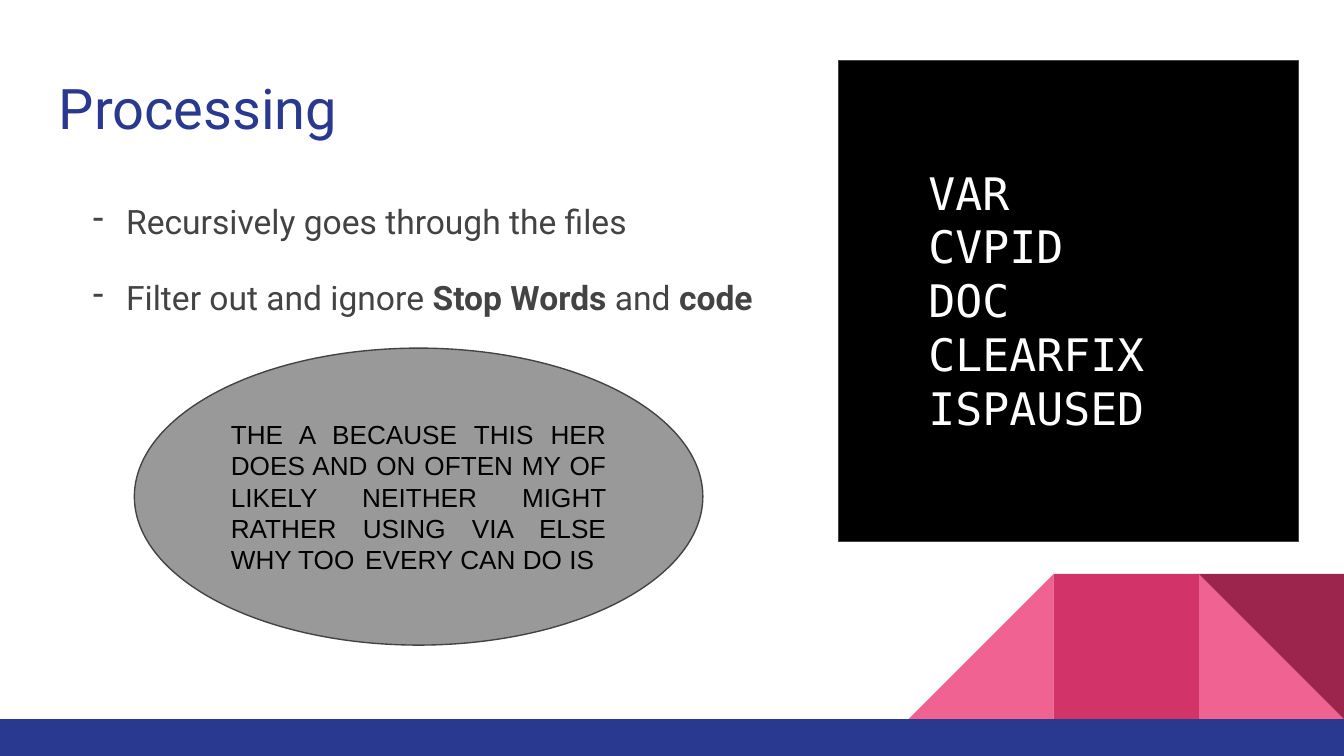
from lxml import etree
from pptx import Presentation
from pptx import util as u
from pptx.dml.color import RGBColor
from pptx.enum import shapes, text
from pptx.oxml.ns import qn

COLORS = {
    "navy": "2A3990", "pink": "F06292", "rose": "D23369", "wine": "9C254D",
    "dark": "434343", "gray": "999999", "black": "000000", "white": "FFFFFF",
}
KINDS = shapes.MSO_SHAPE


def rgb(name):
    return RGBColor.from_string(COLORS[name])


def add_text(sp, paragraphs, font="Roboto", size=18, color="dark",
             anchor=text.MSO_ANCHOR.TOP, align=text.PP_ALIGN.LEFT,
             spacing=None, after=None, bullet=None):
    """Each paragraph is a list of (text, bold) runs."""
    tf = sp.text_frame
    tf.word_wrap = True
    tf.vertical_anchor = anchor
    tf.margin_left = tf.margin_right = u.Inches(0.1)
    tf.margin_top = tf.margin_bottom = u.Inches(0.1)
    for i, runs in enumerate(paragraphs):
        p = tf.add_paragraph() if i else tf.paragraphs[0]
        p.alignment = align
        if spacing:
            p.line_spacing = spacing
        if after:
            p.space_after = u.Pt(after)
        if bullet:
            pPr = p._p.get_or_add_pPr()
            pPr.set("marL", str(u.Inches(0.5)))
            pPr.set("indent", str(u.Inches(-0.25)))
            etree.SubElement(pPr, qn("a:buChar")).set("char", bullet)
        for words, bold in runs:
            r = p.add_run()
            r.text = words
            r.font.name, r.font.size, r.font.bold = font, u.Pt(size), bold
            r.font.color.rgb = rgb(color)


def add_shape(kind, box, fill, line=None, rotation=0):
    sp = s.shapes.add_shape(kind, *map(u.Inches, box))
    sp.shadow.inherit = False
    sp.rotation = rotation
    sp.fill.solid()
    sp.fill.fore_color.rgb = rgb(fill)
    if line:
        sp.line.color.rgb = rgb(line)
        sp.line.width = u.Pt(0.75)
    else:
        sp.line.fill.background()
    return sp


prs = Presentation()
prs.slide_width, prs.slide_height = u.Inches(10), u.Inches(5.625)
s = prs.slides.add_slide(prs.slide_layouts[6])

# Corner decoration: square tiles standing on the bottom bar
tile, bar_top = 1.08, 5.35
for kind, column, fill, rotation in [
    (KINDS.RIGHT_TRIANGLE, 1, "pink", 0),
    (KINDS.RIGHT_TRIANGLE, 3, "pink", 270),
    (KINDS.RECTANGLE, 2, "rose", 0),
    (KINDS.RIGHT_TRIANGLE, 1, "wine", 180),
]:
    add_shape(kind, (10 - column * tile, bar_top - tile, tile, tile), fill,
              rotation=rotation)
add_shape(KINDS.RECTANGLE, (0, bar_top, 10, 0.28), "navy")

# Title
title = s.shapes.add_textbox(*map(u.Inches, (0.34, 0.45, 9.32, 0.66)))
add_text(title, [[("Processing", False)]], size=30, color="navy")

# Bullet points
body = s.shapes.add_textbox(*map(u.Inches, (0.34, 1.35, 9.32, 3.65)))
add_text(body, [
    [("Recursively goes through the files", False)],
    [("Filter out and ignore ", False), ("Stop Words ", True),
     ("and ", False), ("code", True)],
], spacing=1.15, after=16, bullet="-")

# Code words on a black panel
add_shape(KINDS.RECTANGLE, (6.24, 0.45, 3.42, 3.58), "black", line="dark")
code = s.shapes.add_textbox(*map(u.Inches, (6.81, 1.13, 2.28, 2.21)))
words = ["VAR", "CVPID", "DOC", "CLEARFIX", "ISPAUSED"]
add_text(code, [[(word, False)] for word in words],
         font="DejaVu Sans Mono", size=24, color="white")

# Stop words in an ellipse
stop = add_shape(KINDS.OVAL, (1, 2.59, 4.23, 2.21), "gray", line="dark")
add_text(stop, [[(
    "THE A BECAUSE THIS HER DOES AND ON OFTEN MY OF LIKELY NEITHER MIGHT "
    "RATHER USING VIA ELSE WHY TOO \tEVERY CAN DO IS", False)]],
    font="Arial", size=14, color="black",
    anchor=text.MSO_ANCHOR.MIDDLE, align=text.PP_ALIGN.JUSTIFY)

prs.save("out.pptx")
